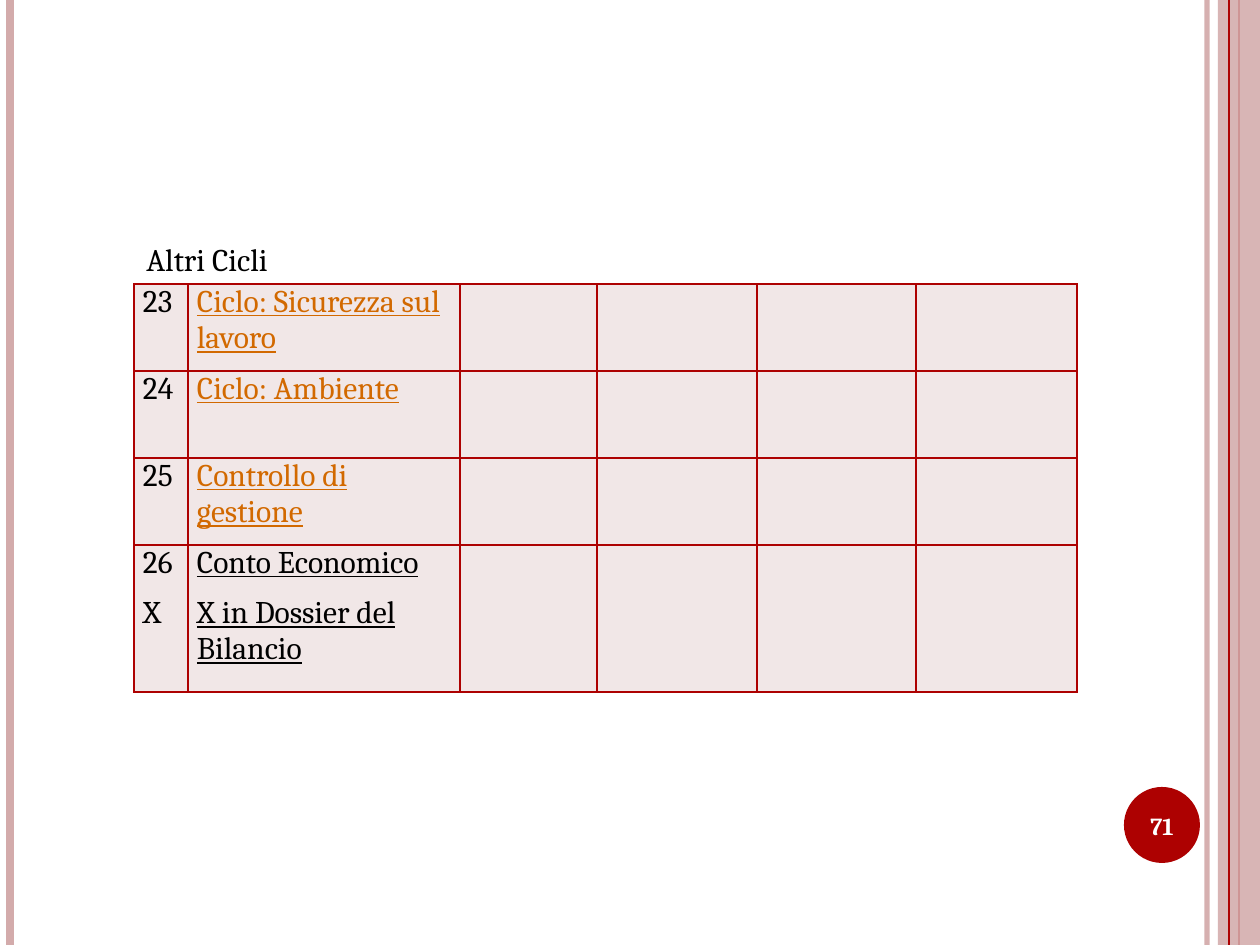
from lxml import etree
from pptx import Presentation
from pptx.dml.color import RGBColor
from pptx.enum.shapes import MSO_CONNECTOR, MSO_SHAPE
from pptx.enum.text import MSO_ANCHOR, MSO_AUTO_SIZE, PP_ALIGN
from pptx.oxml.ns import qn
from pptx.util import Pt

STRAIGHT = MSO_CONNECTOR.STRAIGHT
RECTANGLE, OVAL = MSO_SHAPE.RECTANGLE, MSO_SHAPE.OVAL
MIDDLE = MSO_ANCHOR.MIDDLE
GROW = MSO_AUTO_SIZE.SHAPE_TO_FIT_TEXT
LEFT, CENTER, JUSTIFY = PP_ALIGN.LEFT, PP_ALIGN.CENTER, PP_ALIGN.JUSTIFY

EMU_PER_PX = 914400 / 126
WIDTH, HEIGHT = 1260, 945
FONT = "Cambria"
COLORS = {"red": "AD0101", "rose": "D3ABAB", "cell": "F1E7E7",
          "link": "D26900", "text": "000000", "white": "FFFFFF"}
COLUMN_WIDTHS = [54, 272, 137, 160, 159, 161]
ROW_HEIGHTS = [87, 87, 87, 147]
CYCLES = [
    ("23", "Ciclo: Sicurezza sul lavoro", "link"),
    ("24", "Ciclo: Ambiente", "link"),
    ("25", "Controllo di gestione", "link"),
    ("26\nX", "Conto Economico\nX in Dossier del Bilancio", "text"),
]


def px(length):
    return round(length * EMU_PER_PX)


def rgb(name):
    return RGBColor.from_string(COLORS[name])


def set_opacity(fill_parent, percent):
    color = fill_parent.find(".//" + qn("a:srgbClr"))
    etree.SubElement(color, qn("a:alpha"), val=str(percent * 1000))


def add_stripe(slide, x, color, weight, opacity=100):
    stripe = slide.shapes.add_connector(STRAIGHT, px(x), 0, px(x), px(HEIGHT))
    stripe.line.color.rgb = rgb(color)
    stripe.line.width = Pt(weight)
    properties = stripe._element.spPr
    etree.SubElement(properties, qn("a:effectLst"))
    if opacity < 100:
        set_opacity(properties, opacity)


def add_block(slide, kind, box, color, opacity=100):
    block = slide.shapes.add_shape(kind, *map(px, box))
    block.shadow.inherit = False
    block.fill.solid()
    block.fill.fore_color.rgb = rgb(color)
    block.line.fill.background()
    if opacity < 100:
        set_opacity(block._element.spPr, opacity)


def write_text(frame, text, color, size=18, align=LEFT, spacing=4,
               bold=False, underline=False):
    frame.text = text
    for paragraph in frame.paragraphs:
        paragraph.alignment = align
        paragraph.space_before = paragraph.space_after = Pt(spacing)
        for run in paragraph.runs:
            run.font.name = FONT
            run.font.size = Pt(size)
            run.font.bold = bold
            run.font.underline = underline
            run.font.color.rgb = rgb(color)


def add_label(slide, box):
    label = slide.shapes.add_textbox(*map(px, box))
    return label.text_frame


def style_cell(cell):
    properties = cell._tc.get_or_add_tcPr()
    for side in ("lnL", "lnR", "lnT", "lnB"):
        border = etree.SubElement(properties, qn("a:" + side), w=str(Pt(1)))
        fill = etree.SubElement(border, qn("a:solidFill"))
        etree.SubElement(fill, qn("a:srgbClr"), val=COLORS["red"])
    cell.fill.solid()
    cell.fill.fore_color.rgb = rgb("cell")
    cell.margin_left = cell.margin_right = px(9)
    cell.margin_top = cell.margin_bottom = 0


def add_cycle_table(slide, left, top):
    table = slide.shapes.add_table(
        len(ROW_HEIGHTS), len(COLUMN_WIDTHS), px(left), px(top),
        px(sum(COLUMN_WIDTHS)), px(sum(ROW_HEIGHTS))).table
    table.first_row = table.horz_banding = False
    for column, width in zip(table.columns, COLUMN_WIDTHS):
        column.width = px(width)
    for row, height in zip(table.rows, ROW_HEIGHTS):
        row.height = px(height)
    for cell in table.iter_cells():
        style_cell(cell)
    for index, (number, title, color) in enumerate(CYCLES):
        write_text(table.cell(index, 0).text_frame, number, "text",
                   align=JUSTIFY)
        write_text(table.cell(index, 1).text_frame, title, color,
                   underline=True)


def add_side_decoration(slide):
    add_stripe(slide, 1207, "rose", 3, opacity=93)
    add_stripe(slide, 10, "rose", 4.5)
    add_stripe(slide, 1239, "red", 1.5)
    add_block(slide, RECTANGLE, (1218, 0, 42, HEIGHT), "rose", opacity=87)
    add_stripe(slide, 1229, "red", 0.75)
    add_block(slide, OVAL, (1124, 787, 76, 76), "red")


def main():
    """Build the slide that lists the other cycles."""
    presentation = Presentation()
    presentation.slide_width, presentation.slide_height = px(WIDTH), px(HEIGHT)
    slide = presentation.slides.add_slide(presentation.slide_layouts[6])
    add_side_decoration(slide)
    add_cycle_table(slide, 134, 284)

    page_number = add_label(slide, (1120, 790, 84, 72))
    page_number.word_wrap = True
    page_number.vertical_anchor = MIDDLE
    write_text(page_number, "71", "white", size=14, align=CENTER, spacing=0,
               bold=True)

    heading = add_label(slide, (134, 234, 170, 50))
    heading.word_wrap = False
    heading.auto_size = GROW
    write_text(heading, "Altri Cicli", "text")
    presentation.save("out.pptx")


if __name__ == "__main__":
    main()
